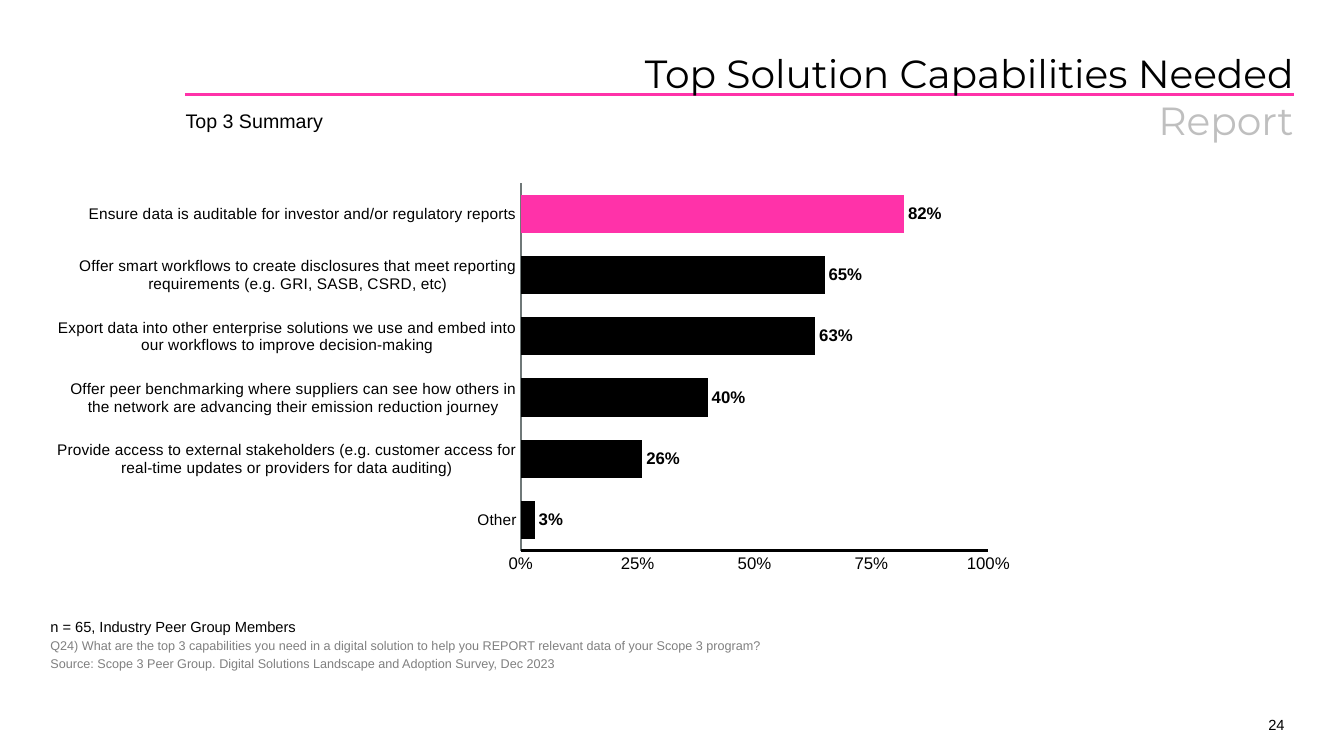
from pptx import Presentation
from pptx.chart.data import CategoryChartData
from pptx.dml.color import RGBColor
from pptx.enum.chart import XL_CHART_TYPE, XL_LABEL_POSITION, XL_TICK_MARK
from pptx.enum.shapes import MSO_CONNECTOR
from pptx.enum.text import MSO_ANCHOR, PP_ALIGN
from pptx.oxml import parse_xml
from pptx.oxml.ns import nsdecls
from pptx.util import Inches, Pt

BLACK = RGBColor(0x00, 0x00, 0x00)
PINK = RGBColor(0xFF, 0x32, 0xA9)
GRAY = RGBColor(0x80, 0x80, 0x80)
LIGHT_GRAY = RGBColor(0xBF, 0xBF, 0xBF)
AXIS_GRAY = RGBColor(0x6F, 0x78, 0x78)
LEFT, RIGHT = PP_ALIGN.LEFT, PP_ALIGN.RIGHT
TOP, BOTTOM = MSO_ANCHOR.TOP, MSO_ANCHOR.BOTTOM
NO_TICK = XL_TICK_MARK.NONE


def set_font(font, size, color=BLACK, name="Arial", bold=False):
    font.size = Pt(size)
    font.name = name
    font.bold = bold
    font.color.rgb = color


def add_text(box, lines, inset=0.1, align=LEFT, anchor=TOP):
    """Add a text box; each line is (text, size, color)."""
    tf = slide.shapes.add_textbox(*[Inches(v) for v in box]).text_frame
    tf.word_wrap = True
    tf.vertical_anchor = anchor
    tf.margin_left = 0
    tf.margin_top = tf.margin_right = tf.margin_bottom = Inches(inset)
    for i, (text, size, color) in enumerate(lines):
        p = tf.add_paragraph() if i else tf.paragraphs[0]
        p.text = text
        p.alignment = align
        if i:
            p.space_before = Pt(2)
        set_font(p.font, size, color)
    return tf


prs = Presentation()
prs.slide_width, prs.slide_height = Inches(13.33), Inches(7.5)
slide = prs.slides.add_slide(prs.slide_layouts[6])

# Page number and title rule
add_text((12.29, 7.1, 0.45, 0.18), [("24", 10.5, BLACK)], 0, RIGHT, BOTTOM)
rule = slide.shapes.add_connector(
    MSO_CONNECTOR.STRAIGHT, Inches(1.84), Inches(0.94), Inches(12.83), Inches(0.94))
rule.line.color.rgb = PINK
rule.line.width = Pt(2)
rule._element.spPr.append(parse_xml(f"<a:effectLst {nsdecls('a')}/>"))

# Title over two lines, the second one muted
tf = add_text((1.84, 0.49, 10.99, 0.49), [("", 28, BLACK)], 0, RIGHT)
p = tf.paragraphs[0]
for text, color in [("Top Solution Capabilities Needed", BLACK), ("Report", LIGHT_GRAY)]:
    if p.runs:
        p.add_line_break()
    r = p.add_run()
    r.text = text
    set_font(r.font, 28, color, "Montserrat")

# Subtitle and footnotes
add_text((1.84, 0.98, 7.22, 0.44), [("Top 3 Summary", 14, BLACK)])
add_text((0.5, 6.02, 8.82, 0.74), [
    ("n = 65, Industry Peer Group Members", 10.5, BLACK),
    ("Q24) What are the top 3 capabilities you need in a digital solution to help you "
     "REPORT relevant data of your Scope 3 program?", 9, GRAY),
    ("Source: Scope 3 Peer Group. Digital Solutions Landscape and Adoption Survey, "
     "Dec 2023", 9, GRAY),
], anchor=BOTTOM)

# Bar chart, listed from bottom to top
capabilities = [
    ("Other", 0.03),
    ("Provide access to external stakeholders (e.g. customer access for real-time "
     "updates or providers for data auditing)", 0.26),
    ("Offer peer benchmarking where suppliers can see how others in the network are "
     "advancing their emission reduction journey", 0.40),
    ("Export data into other enterprise solutions we use and embed into our workflows "
     "to improve decision-making", 0.63),
    ("Offer smart workflows to create disclosures that meet reporting requirements "
     "(e.g. GRI, SASB, CSRD, etc)", 0.65),
    ("Ensure data is auditable for investor and/or regulatory reports", 0.82),
]
data = CategoryChartData(number_format="0%")
data.categories = [name for name, share in capabilities]
data.add_series("Series 1", [share for name, share in capabilities])
chart = slide.shapes.add_chart(
    XL_CHART_TYPE.BAR_CLUSTERED, Inches(0.5), Inches(1.8), Inches(9.6), Inches(4.22),
    data).chart
chart.has_legend = False
chart.has_title = False
set_font(chart.font, 10)

# Bars and value labels
plot = chart.plots[0]
plot.gap_width = 60
plot.vary_by_categories = False
series = plot.series[0]
bars = [series.format, series.points[len(capabilities) - 1].format]
for bar, color in zip(bars, [BLACK, PINK]):
    bar.fill.solid()
    bar.fill.fore_color.rgb = color
labels = series.data_labels
labels.show_value = True
labels.number_format = "0%"
labels.number_format_is_linked = False
labels.position = XL_LABEL_POSITION.OUTSIDE_END
set_font(labels.font, 12, bold=True)

# Axes
for axis, size, color in [(chart.category_axis, 11, AXIS_GRAY), (chart.value_axis, 12, BLACK)]:
    axis.major_tick_mark = axis.minor_tick_mark = NO_TICK
    axis.has_major_gridlines = False
    axis.format.line.color.rgb = color
    axis.format.line.width = Pt(1.57)
    set_font(axis.tick_labels.font, size)
shares = chart.value_axis
shares.minimum_scale, shares.maximum_scale, shares.major_unit = 0, 1, 0.25
shares.tick_labels.number_format = "0%"
shares.tick_labels.number_format_is_linked = False

# Fixed inner plot area
plot_area = chart._chartSpace.chart.plotArea
for layout in plot_area.findall("{*}layout"):
    plot_area.remove(layout)
place = "".join(f'<c:{tag} val="{val}"/>' for tag, val in [
    ("layoutTarget", "inner"), ("xMode", "edge"), ("yMode", "edge"),
    ("x", 0.486), ("y", 0.004), ("w", 0.483), ("h", 0.864)])
plot_area.insert(0, parse_xml(
    f"<c:layout {nsdecls('c')}><c:manualLayout>{place}</c:manualLayout></c:layout>"))

prs.save("out.pptx")
